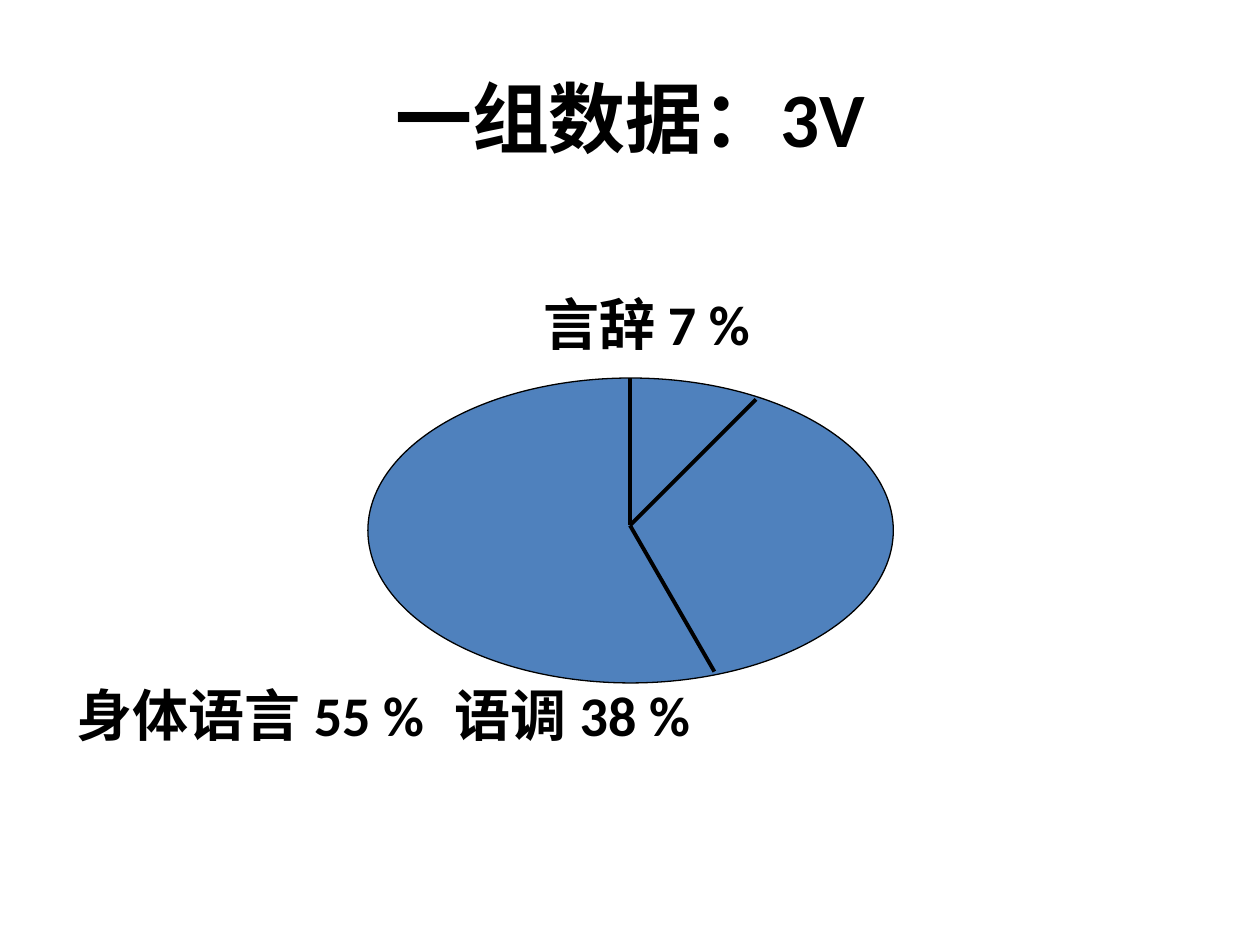
from dataclasses import dataclass

from lxml.etree import SubElement
from pptx import Presentation
from pptx.dml.color import RGBColor
from pptx.enum.shapes import MSO_CONNECTOR, MSO_SHAPE
from pptx.enum.text import MSO_ANCHOR, MSO_AUTO_SIZE, PP_ALIGN
from pptx.oxml.ns import qn
from pptx.util import Inches, Pt


@dataclass(frozen=True)
class Theme:
    font: str = "Calibri"
    ink: RGBColor = RGBColor(0, 0, 0)
    pie: RGBColor = RGBColor(0x4F, 0x81, 0xBD)
    title: Pt = Pt(44)
    label: Pt = Pt(32)
    outline: Pt = Pt(0.75)
    divider: Pt = Pt(2.25)


theme = Theme()


def place(sp, left, top, width, height):
    sp.left, sp.top = Inches(left), Inches(top)
    sp.width, sp.height = Inches(width), Inches(height)


def add_text(p, text, size):
    r = p.add_run()
    r.text = text
    r.font.name, r.font.size, r.font.bold = theme.font, size, True
    r.font.color.rgb = theme.ink


prs = Presentation()
prs.slide_width, prs.slide_height = Inches(10), Inches(7.5)
s = prs.slides.add_slide(prs.slide_layouts[1])

# Title
title = s.shapes.title
place(title, 0.5, 0.3, 9, 1.25)
title.text_frame.vertical_anchor = MSO_ANCHOR.MIDDLE
p = title.text_frame.paragraphs[0]
p.alignment = PP_ALIGN.CENTER
add_text(p, "一组数据：3V", theme.title)

# Labels: one above the pie, two on a shared line below it
body = s.placeholders[1]
place(body, 0.51, 2.25, 8.87, 4.58)
tf = body.text_frame
tf.auto_size = MSO_AUTO_SIZE.NONE
labels = [
    (["言辞 7 %"], 3.7, 0),
    (["身体语言 55 %", "\t语调 38 %"], 0, 185),
]
for i, (texts, indent, gap) in enumerate(labels):
    p = tf.add_paragraph() if i else tf.paragraphs[0]
    p.space_before = Pt(gap)
    pPr = p._p.get_or_add_pPr()
    pPr.set("marL", str(Inches(indent)))
    pPr.set("indent", "0")
    SubElement(pPr, qn("a:buNone"))
    if len(texts) > 1:
        tabs = SubElement(pPr, qn("a:tabLst"))
        SubElement(tabs, qn("a:tab"), pos=str(Inches(5.8)), algn="l")
    for text in texts:
        add_text(p, text, theme.label)

# Pie
pie = s.shapes.add_shape(MSO_SHAPE.OVAL, Inches(2.92), Inches(3), Inches(4.17), Inches(2.42))
pie.shadow.inherit = False
pie.fill.solid()
pie.fill.fore_color.rgb = theme.pie
pie.line.color.rgb = theme.ink
pie.line.width = theme.outline

# Dividers from the centre to the rim
center = Inches(5), Inches(4.17)
for x, y in [(5, 3), (6, 3.17), (5.67, 5.33)]:
    line = s.shapes.add_connector(MSO_CONNECTOR.STRAIGHT, *center, Inches(x), Inches(y))
    line.line.color.rgb = theme.ink
    line.line.width = theme.divider
    SubElement(line._element.spPr, qn("a:effectLst"))

prs.save("out.pptx")
